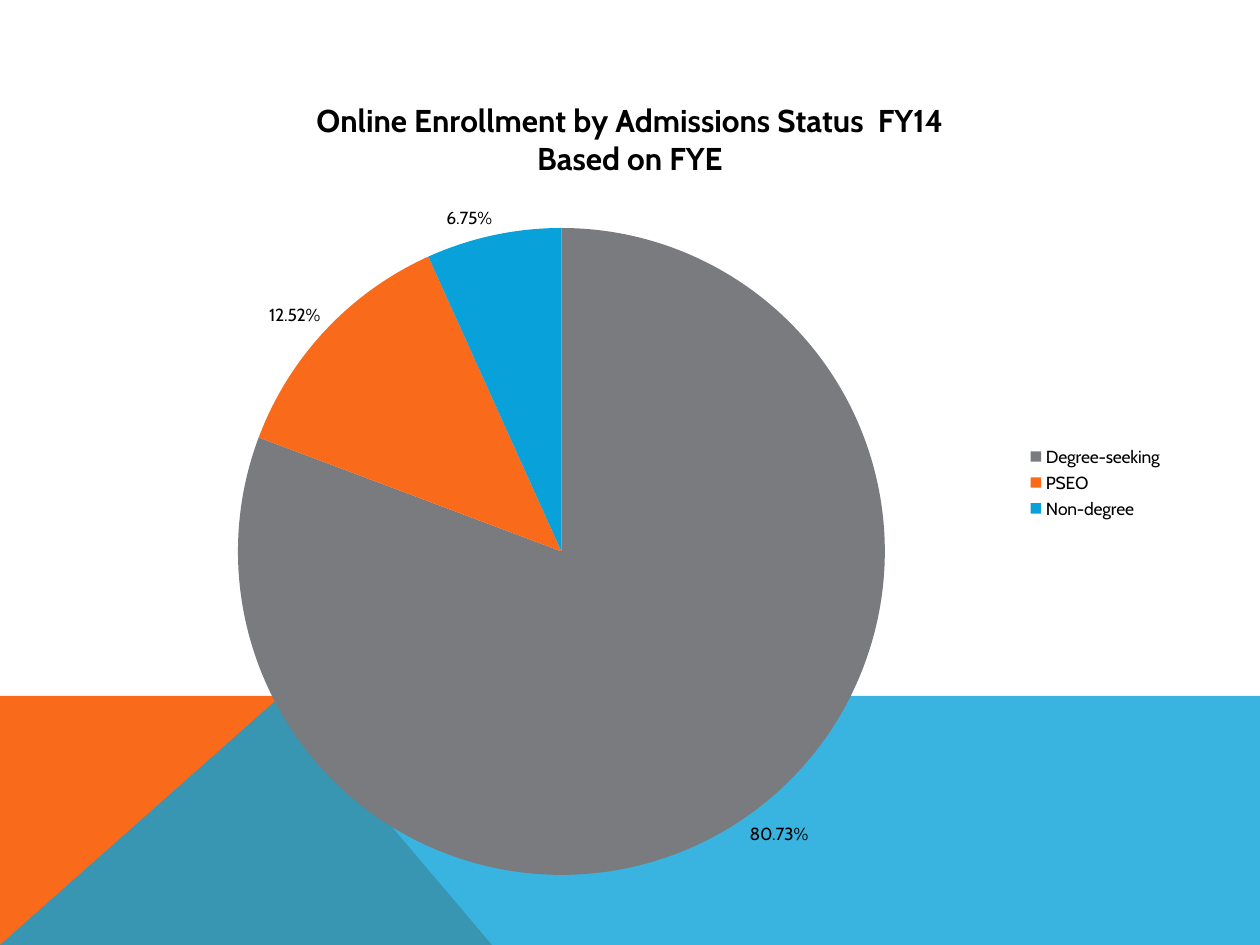
from lxml.etree import SubElement
from pptx import Presentation
from pptx.chart.data import CategoryChartData
from pptx.dml.color import RGBColor
from pptx.enum.chart import XL_CHART_TYPE as ChartType
from pptx.enum.chart import XL_LABEL_POSITION as LabelPosition
from pptx.enum.chart import XL_LEGEND_POSITION as LegendPosition
from pptx.oxml import parse_xml
from pptx.oxml.ns import nsdecls, qn
from pptx.util import Pt

EMU_PER_PX = 914400 / 126
WIDTH, HEIGHT = 1260, 945

BLACK = RGBColor(0x00, 0x00, 0x00)
GRAY = RGBColor(0x79, 0x7B, 0x7E)
ORANGE = RGBColor(0xF9, 0x6A, 0x1B)
BLUE = RGBColor(0x08, 0xA1, 0xD9)


def px(length):
    return round(length * EMU_PER_PX)


class SlideBuilder:
    font_name = "Cabin"

    def __init__(self, slide):
        self.slide = slide

    def style(self, font, size, bold=False):
        font.name = self.font_name
        font.size = Pt(size)
        font.bold = bold
        font.color.rgb = BLACK

    def polygon(self, points, color, opacity=100):
        builder = self.slide.shapes.build_freeform(*points[0], scale=EMU_PER_PX)
        builder.add_line_segments(points[1:], close=True)
        shape = builder.convert_to_shape()
        shape.shadow.inherit = False
        shape.line.fill.background()
        shape.fill.solid()
        shape.fill.fore_color.rgb = color
        if opacity < 100:
            clr = shape.fill._xPr.find(".//" + qn("a:srgbClr"))
            SubElement(clr, qn("a:alpha"), val=str(opacity * 1000))

    def pie(self, box, plot, title_lines, shares):
        """Draw a pie; shares holds (category, value, color) rows."""
        data = CategoryChartData(number_format="0.00%")
        data.categories = [category for category, _, _ in shares]
        data.add_series("Series 1", [value for _, value, _ in shares])
        chart = self.slide.shapes.add_chart(
            ChartType.PIE, *map(px, box), data).chart
        self.style(chart.font, 10)

        # Title
        title = chart.chart_title.text_frame
        title.text = "\n".join(title_lines)
        for paragraph in title.paragraphs:
            self.style(paragraph.font, 18, bold=True)

        # Legend
        chart.has_legend = True
        chart.legend.position = LegendPosition.RIGHT
        chart.legend.include_in_layout = False

        # Slices and their labels
        pie_plot = chart.plots[0]
        pie_plot.vary_by_categories = True
        series = pie_plot.series[0]
        for index, (_, _, color) in enumerate(shares):
            fill = series.points[index].format.fill
            fill.solid()
            fill.fore_color.rgb = color
        labels = series.data_labels
        labels.show_value = True
        labels.show_percentage = False
        labels.number_format = "0.00%"
        labels.number_format_is_linked = False
        labels.position = LabelPosition.OUTSIDE_END
        self.style(labels.font, 10)

        self.place_plot(chart, box, plot)

    def place_plot(self, chart, box, plot):
        left, top, width, height = box
        fractions = {
            "x": (plot[0] - left) / width,
            "y": (plot[1] - top) / height,
            "w": plot[2] / width,
            "h": plot[3] / height,
        }
        modes = "".join(f'<c:{k}Mode val="edge"/>' for k in "xy")
        values = "".join(f'<c:{k} val="{v:.4f}"/>' for k, v in fractions.items())
        layout = parse_xml(
            f'<c:layout {nsdecls("c")}><c:manualLayout>'
            f'<c:layoutTarget val="inner"/>{modes}{values}'
            f'</c:manualLayout></c:layout>')
        plot_area = chart._chartSpace.chart.plotArea
        for old in plot_area.findall(qn("c:layout")):
            plot_area.remove(old)
        plot_area.insert(0, layout)


def main():
    prs = Presentation()
    prs.slide_width, prs.slide_height = px(WIDTH), px(HEIGHT)
    page = SlideBuilder(prs.slides.add_slide(prs.slide_layouts[6]))

    # Footer bands meeting at the fold
    band_top, fold = 696, 281
    page.polygon([(0, HEIGHT), (0, band_top), (fold, band_top), (492, HEIGHT)],
                 ORANGE)
    page.polygon([(0, HEIGHT), (fold, band_top), (WIDTH, band_top),
                  (WIDTH, HEIGHT)], BLUE, opacity=80)

    # Enrollment chart
    page.pie(
        box=(84, 73, 1092, 819),
        plot=(238, 228, 647, 647),
        title_lines=["Online Enrollment by Admissions Status  FY14",
                     "Based on FYE"],
        shares=[("Degree-seeking", 0.8073, GRAY),
                ("PSEO", 0.1252, ORANGE),
                ("Non-degree", 0.0675, BLUE)])

    prs.save("out.pptx")


if __name__ == "__main__":
    main()
